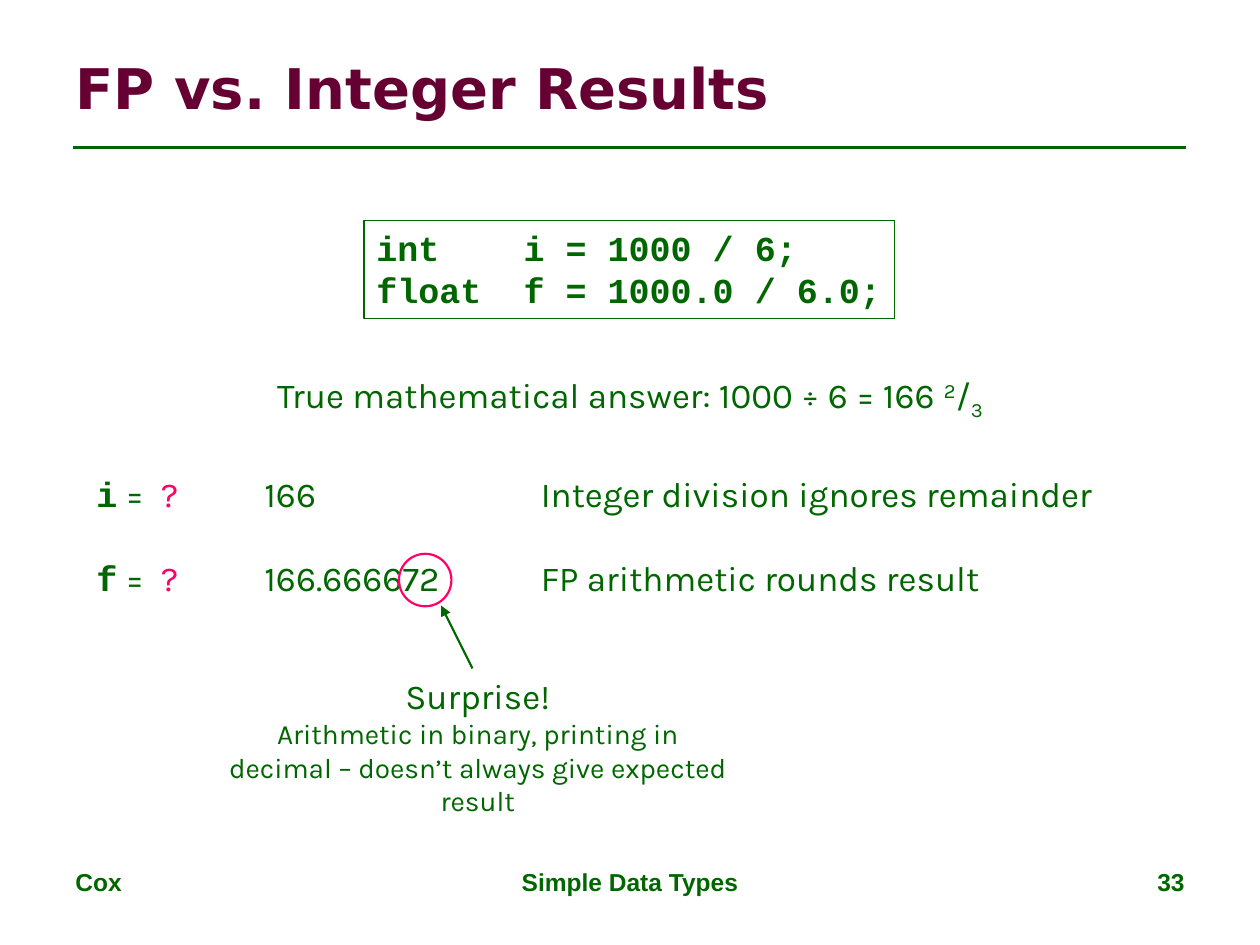
from dataclasses import dataclass
from typing import Optional

from lxml import etree
from pptx import Presentation
from pptx.dml.color import RGBColor
from pptx.enum.shapes import MSO_CONNECTOR, MSO_SHAPE
from pptx.enum.text import MSO_ANCHOR, MSO_AUTO_SIZE, PP_ALIGN
from pptx.oxml.ns import qn
from pptx.util import Pt

LEFT, CENTER, RIGHT = PP_ALIGN.LEFT, PP_ALIGN.CENTER, PP_ALIGN.RIGHT
TOP, MIDDLE = MSO_ANCHOR.TOP, MSO_ANCHOR.MIDDLE
FIXED, GROW = MSO_AUTO_SIZE.NONE, MSO_AUTO_SIZE.SHAPE_TO_FIT_TEXT
RECTANGLE, OVAL = MSO_SHAPE.RECTANGLE, MSO_SHAPE.OVAL
STRAIGHT = MSO_CONNECTOR.STRAIGHT

COLORS = {"green": "006600", "maroon": "660033", "pink": "FF0066"}
BODY, CODE, HEADING, FOOTER = "Karla", "Courier New", "DejaVu Sans", "Arial"
ROW_TOP, ROW_HEIGHT, ROW_GAP = 266.5, 79, 24


@dataclass(frozen=True)
class Box:
    left: float
    top: float
    width: float
    height: float

    def lengths(self) -> tuple:
        return Pt(self.left), Pt(self.top), Pt(self.width), Pt(self.height)


@dataclass(frozen=True)
class Span:
    text: str
    font: str = BODY
    size: float = 20
    color: str = "green"
    bold: bool = False
    baseline: Optional[int] = None


def rgb(name: str) -> RGBColor:
    return RGBColor.from_string(COLORS[name])


def add_span(paragraph, span: Span) -> None:
    run = paragraph.add_run()
    run.text = span.text
    run.font.name = span.font
    run.font.size = Pt(span.size)
    run.font.bold = span.bold
    run.font.color.rgb = rgb(span.color)
    if span.baseline is not None:
        run._r.get_or_add_rPr().set("baseline", str(span.baseline * 1000))


def write(shape, lines: list[list[Span]], *, align=LEFT, anchor=TOP,
          wrap: bool = True, fit=FIXED, gap: float = 0) -> None:
    frame = shape.text_frame
    frame.word_wrap = wrap
    frame.auto_size = fit
    frame.vertical_anchor = anchor
    for index, spans in enumerate(lines):
        paragraph = frame.add_paragraph() if index else frame.paragraphs[0]
        paragraph.alignment = align
        paragraph.space_before = Pt(gap if index else 0)
        for span in spans:
            add_span(paragraph, span)


def add_text(slide, box: Box, lines: list[list[Span]], **options) -> None:
    write(slide.shapes.add_textbox(*box.lengths()), lines, **options)


def add_outline(slide, kind, box: Box, color: str, weight: float):
    shape = slide.shapes.add_shape(kind, *box.lengths())
    shape.shadow.inherit = False
    shape.fill.background()
    shape.line.color.rgb = rgb(color)
    shape.line.width = Pt(weight)
    return shape


def add_line(slide, start: tuple, end: tuple, weight: float,
             arrow: bool = False) -> None:
    line = slide.shapes.add_connector(
        STRAIGHT, *(Pt(value) for value in start + end))
    line.line.color.rgb = rgb("green")
    line.line.width = Pt(weight)
    properties = line._element.spPr
    etree.SubElement(properties, qn("a:effectLst"))
    if arrow:
        outline = properties.find(qn("a:ln"))
        etree.SubElement(outline, qn("a:tailEnd"), type="triangle")


def question(variable: str) -> list[Span]:
    return [Span(variable, font=CODE, bold=True), Span(" =  "),
            Span("?", color="pink")]


def main() -> None:
    presentation = Presentation()
    presentation.slide_width = Pt(720)
    presentation.slide_height = Pt(540)
    slide = presentation.slides.add_slide(presentation.slide_layouts[5])

    title = slide.shapes.title
    title.left, title.top, title.width, title.height = Box(
        36, 21.6, 648, 56).lengths()
    write(title, [[Span("FP vs. Integer Results", HEADING, 32, "maroon", True)]],
          anchor=MIDDLE)
    add_line(slide, (42, 84.25), (678, 84.25), 1.5)

    footers = [("Cox", 36, 168, LEFT), ("Simple Data Types", 246, 228, CENTER),
               ("33", 516, 168, RIGHT)]
    for text, left, width, align in footers:
        add_text(slide, Box(left, 492, width, 37),
                 [[Span(text, FOOTER, 14, bold=True)]], align=align)

    code = add_outline(slide, RECTANGLE, Box(208, 126, 303, 56), "green", 0.75)
    statements = ["int    i = 1000 / 6;", "float  f = 1000.0 / 6.0;"]
    write(code, [[Span(text, CODE, bold=True)] for text in statements],
          wrap=False, fit=GROW)

    answer = [Span("True mathematical answer: 1000 ÷ 6 = 166 "),
              Span("2", baseline=30), Span("/"), Span("3", baseline=-25)]
    add_text(slide, Box(146, 210, 428, 31), [answer],
             align=CENTER, wrap=False, fit=GROW)

    columns = [
        (48, 69, False, [question("i"), question("f")]),
        (144, 118, False, [[Span("166")], [Span("166.666672")]]),
        (302, 382, True, [[Span("Integer division ignores remainder")],
                          [Span("FP arithmetic rounds result")]]),
    ]
    for left, width, wrap, lines in columns:
        add_text(slide, Box(left, ROW_TOP, width, ROW_HEIGHT), lines,
                 wrap=wrap, fit=GROW, gap=ROW_GAP)

    explanation = ("Arithmetic in binary, printing in decimal – "
                   "doesn’t always give expected result")
    add_text(slide, Box(120, 382, 306, 70),
             [[Span("Surprise!")], [Span(explanation, size=16)]],
             align=CENTER, fit=GROW)
    add_outline(slide, OVAL, Box(228, 316.5, 30, 30), "pink", 1.25)
    add_line(slide, (270, 382), (252, 346), 1.25, arrow=True)

    presentation.save("out.pptx")


if __name__ == "__main__":
    main()
